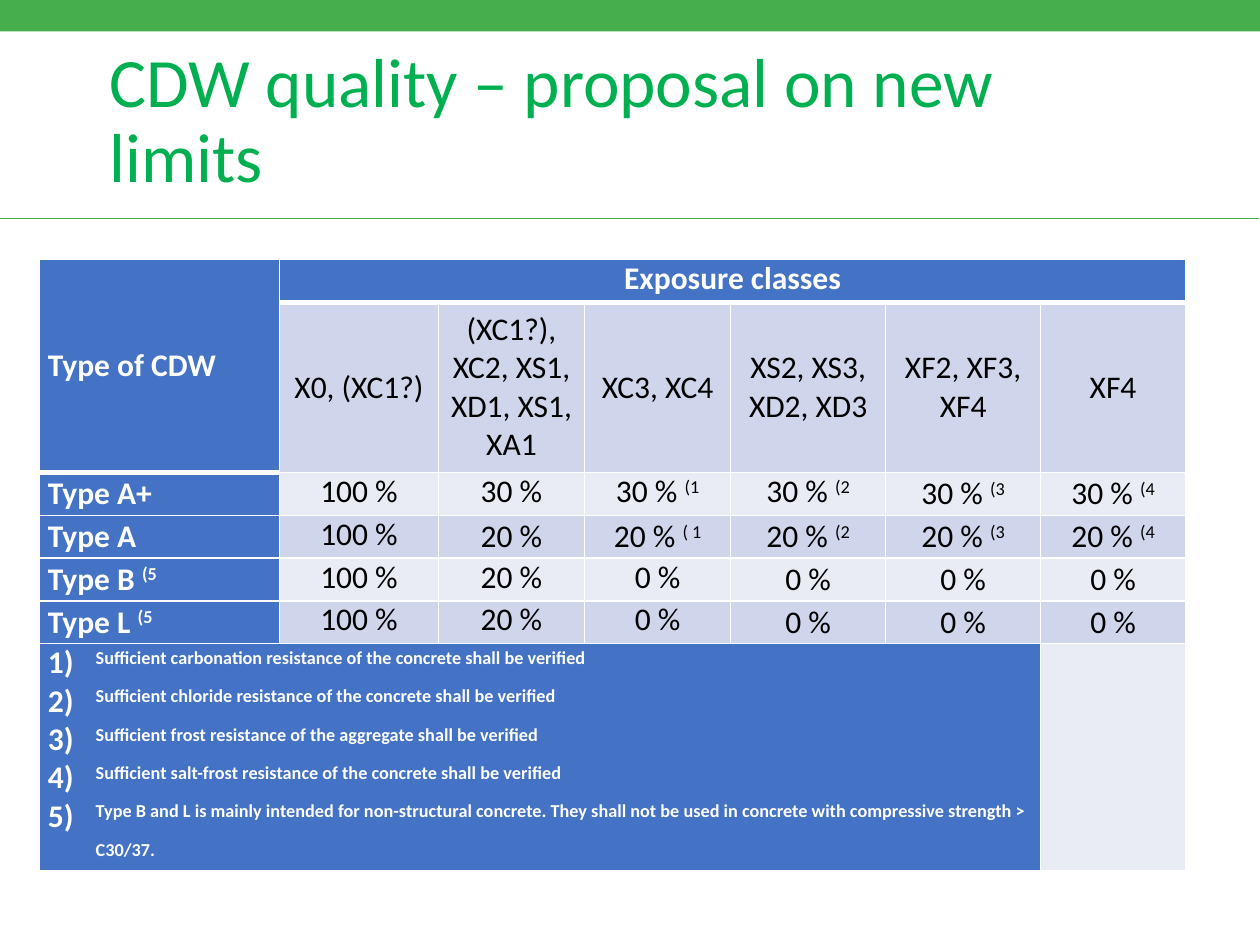
from dataclasses import dataclass

from lxml import etree
from pptx import Presentation
from pptx import util as u
from pptx.dml.color import RGBColor
from pptx.enum import shapes, text
from pptx.oxml import ns


@dataclass(frozen=True)
class Theme:
    font: str = "Calibri"
    title_size: float = 39.6
    table_size: float = 18
    bar: str = "47AE4C"
    title: str = "00B050"
    header: str = "4472C4"
    bands: tuple = ("E9EBF5", "CFD5EA")
    light: str = "FFFFFF"
    dark: str = "000000"
    thin: float = 1
    heavy: float = 3


THEME = Theme()
WIDTH, HEIGHT = u.Inches(10), u.Inches(7.5)
COLUMNS = [1.91, 1.26, 1.16, 1.16, 1.23, 1.23, 1.15]
ROWS = [0.34, 1.35, 0.34, 0.34, 0.34, 0.34, 1.35]
LAST_ROW, LAST_COLUMN = len(ROWS) - 1, len(COLUMNS) - 1

# A caret starts superscript text.
CLASSES = ["X0, (XC1?)", "(XC1?), XC2, XS1, XD1, XS1, XA1", "XC3, XC4",
           "XS2, XS3, XD2, XD3", "XF2, XF3, XF4", "XF4"]
# Type, limits, and how many of the limits sit at the top of their cell.
LIMITS = [
    ("Type A+", ["100 %", "30 %", "30 % ^(1", "30 % ^(2", "30 % ^(3", "30 % ^(4"], 4),
    ("Type A", ["100 %", "20 %", "20 % ^( 1", "20 % ^(2", "20 % ^(3", "20 % ^(4"], 1),
    ("Type B ^(5", ["100 %", "20 %"] + ["0 %"] * 4, 3),
    ("Type L ^(5", ["100 %", "20 %"] + ["0 %"] * 4, 3),
]
FOOTNOTES = [
    "^Sufficient carbonation resistance of the concrete shall be verified",
    "^Sufficient chloride resistance of the concrete shall be verified",
    "^Sufficient frost resistance of the aggregate shall be verified",
    "^Sufficient salt-frost resistance of the concrete shall be verified",
    "^Type B and L is mainly intended for non-structural concrete. They shall "
    "not be used in concrete with compressive strength > C30/37.",
]


def colour(value):
    return RGBColor.from_string(value)


def style(font, size, value, bold=False):
    font.name, font.size, font.bold = THEME.font, u.Pt(size), bold
    font.color.rgb = colour(value)


def add_bar(slide):
    bar = slide.shapes.add_shape(
        shapes.MSO_SHAPE.RECTANGLE, 0, 0, WIDTH, u.Inches(0.25))
    bar.shadow.inherit = False
    bar.fill.solid()
    bar.fill.fore_color.rgb = colour(THEME.bar)
    bar.line.fill.background()


def add_rule(slide):
    top, shift = u.Inches(1.73), u.Inches(0.01)
    rule = slide.shapes.add_connector(
        shapes.MSO_CONNECTOR.STRAIGHT, -shift, top, WIDTH - shift, top)
    rule.line.color.rgb = colour(THEME.bar)
    rule.line.width = u.Pt(0.5)
    etree.SubElement(rule._element.spPr, ns.qn("a:effectLst"))


def add_title(slide, wording):
    title = slide.shapes.add_textbox(
        u.Inches(0.77), u.Inches(0.4), u.Inches(8.54), u.Inches(1.14))
    frame = title.text_frame
    frame.word_wrap = True
    frame.vertical_anchor = text.MSO_ANCHOR.MIDDLE
    frame.text = wording
    frame.paragraphs[0].line_spacing = 0.9
    style(frame.paragraphs[0].runs[0].font, THEME.title_size, THEME.title)


def write(paragraph, wording, value, bold):
    for level, part in enumerate(wording.split("^")):
        if part:
            run = paragraph.add_run()
            run.text = part
            style(run.font, THEME.table_size, value, bold)
            if level:
                run._r.get_or_add_rPr().set("baseline", "30000")


def fill_cell(cell, wording, centred=True, top=False, light=False):
    cell.vertical_anchor = text.MSO_ANCHOR.TOP if top else text.MSO_ANCHOR.MIDDLE
    paragraph = cell.text_frame.paragraphs[0]
    paragraph.alignment = text.PP_ALIGN.CENTER if centred else text.PP_ALIGN.LEFT
    write(paragraph, wording, THEME.light if light else THEME.dark, light)


def fill_footnotes(cell):
    cell.vertical_anchor = text.MSO_ANCHOR.MIDDLE
    frame = cell.text_frame
    for index, note in enumerate(FOOTNOTES):
        paragraph = frame.add_paragraph() if index else frame.paragraphs[0]
        properties = paragraph._p.get_or_add_pPr()
        indent = u.Inches(0.38)
        properties.set("marL", str(indent))
        properties.set("indent", str(-indent))
        etree.SubElement(properties, ns.qn("a:buFont")).set("typeface", "+mj-lt")
        etree.SubElement(properties, ns.qn("a:buAutoNum")).set("type", "arabicParenR")
        write(paragraph, note, THEME.light, True)


def add_border(cell, side, width):
    border = etree.SubElement(
        cell._tc.get_or_add_tcPr(), ns.qn(f"a:ln{side}"), w=str(u.Pt(width)))
    fill = etree.SubElement(border, ns.qn("a:solidFill"))
    etree.SubElement(fill, ns.qn("a:srgbClr"), val=THEME.light)


def paint_cell(cell, row, column):
    """Set margins, borders and fill; a heavy edge closes the header."""
    cell.margin_left = cell.margin_right = u.Inches(0.07)
    cell.margin_top = cell.margin_bottom = 0
    header_end = 1 if column else 2
    edges = {"L": None, "R": None, "T": row, "B": row + cell.span_height}
    for side, edge in edges.items():
        add_border(cell, side, THEME.heavy if edge == header_end else THEME.thin)
    is_header = (row == 0 or column == 0
                 or (row == LAST_ROW and column < LAST_COLUMN))
    cell.fill.solid()
    cell.fill.fore_color.rgb = colour(
        THEME.header if is_header else THEME.bands[row % 2])


def add_limits_table(slide):
    table = slide.shapes.add_table(
        len(ROWS), len(COLUMNS), u.Inches(0.31), u.Inches(2.06),
        u.Inches(sum(COLUMNS)), u.Inches(sum(ROWS))).table
    for column, width in zip(table.columns, COLUMNS):
        column.width = u.Inches(width)
    for row, height in zip(table.rows, ROWS):
        row.height = u.Inches(height)

    cell = table.cell
    cell(0, 0).merge(cell(1, 0))
    cell(0, 1).merge(cell(0, LAST_COLUMN))
    cell(LAST_ROW, 0).merge(cell(LAST_ROW, LAST_COLUMN - 1))
    for row in range(len(ROWS)):
        for column in range(len(COLUMNS)):
            paint_cell(cell(row, column), row, column)

    fill_cell(cell(0, 0), "Type of CDW", centred=False, light=True)
    fill_cell(cell(0, 1), "Exposure classes", top=True, light=True)
    for column, exposure in enumerate(CLASSES, 1):
        fill_cell(cell(1, column), exposure)
    for row, (kind, limits, top_count) in enumerate(LIMITS, 2):
        fill_cell(cell(row, 0), kind, centred=False, light=True)
        for column, limit in enumerate(limits, 1):
            fill_cell(cell(row, column), limit, top=column <= top_count)
    fill_footnotes(cell(LAST_ROW, 0))


def main():
    deck = Presentation()
    deck.slide_width, deck.slide_height = WIDTH, HEIGHT
    slide = deck.slides.add_slide(deck.slide_layouts[6])
    add_bar(slide)
    add_rule(slide)
    add_title(slide, "CDW quality – proposal on new limits")
    add_limits_table(slide)
    deck.save("out.pptx")


if __name__ == "__main__":
    main()
